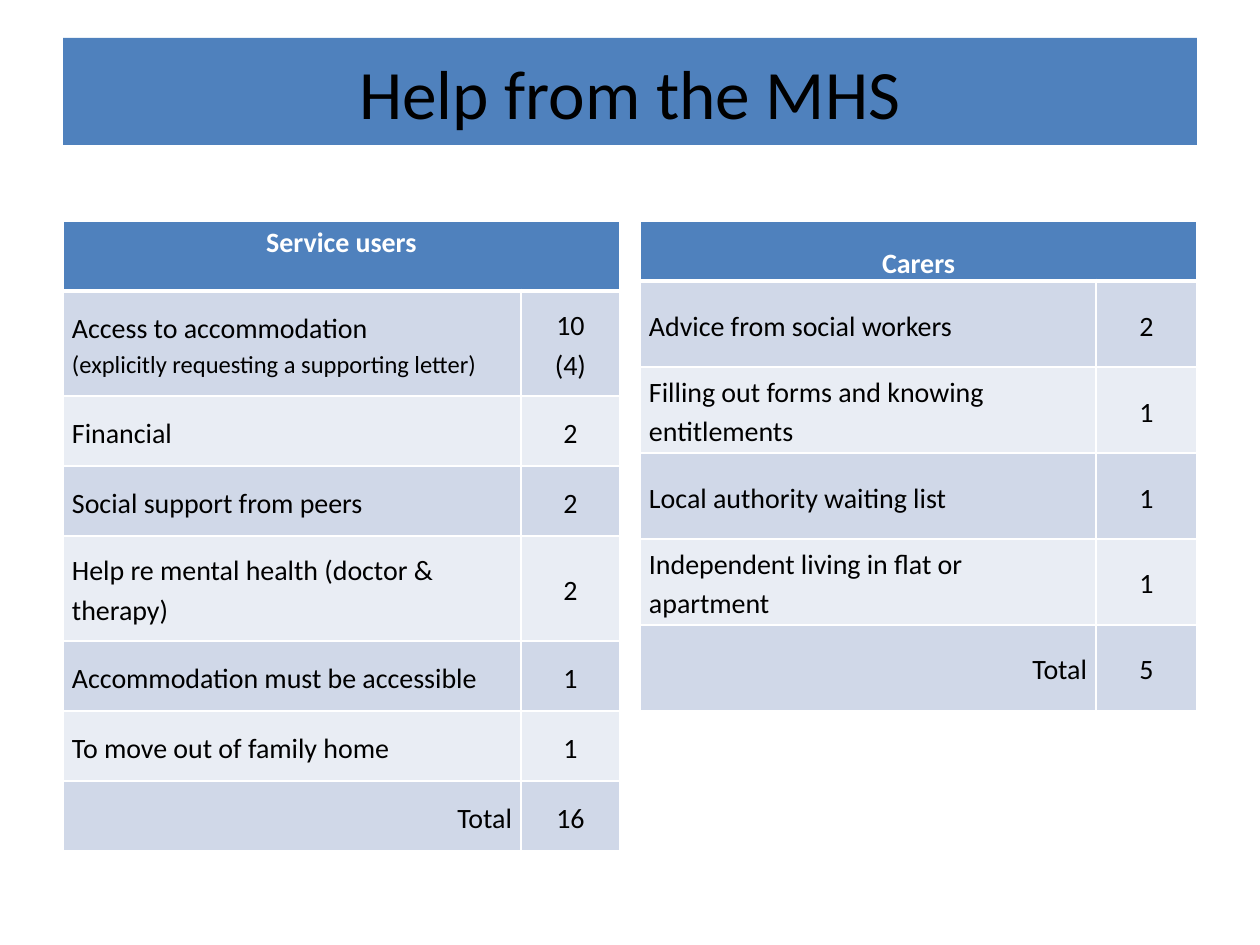
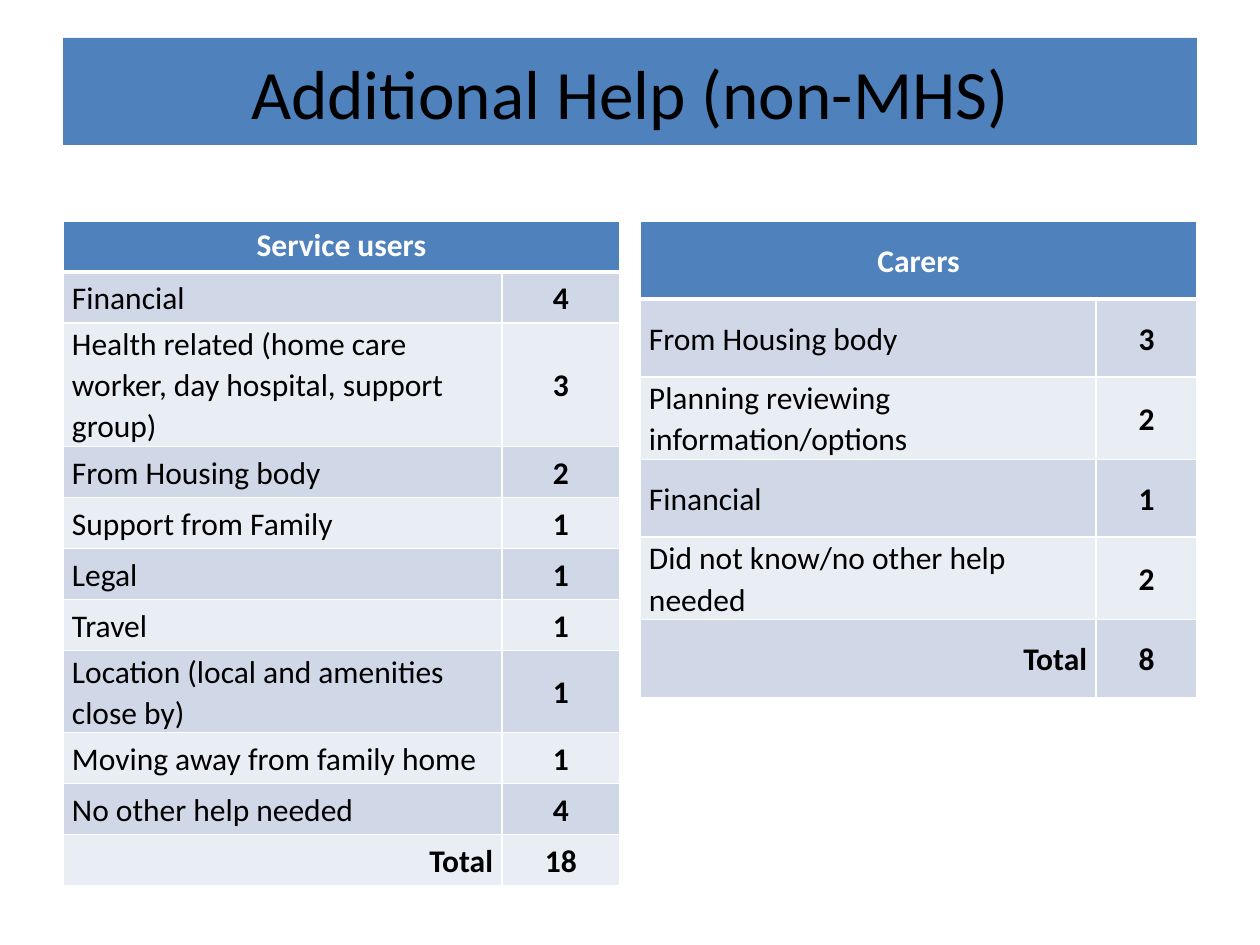
import pptx
import pptx.dml.color
import pptx.enum.text
import pptx.util
from lxml import etree
from pptx.oxml.ns import qn

PX = 914400 / 126
FONT = "Calibri"
COLORS = {"band": "4F81BD", "odd": "D0D8E8", "even": "E9EDF4",
          "text": "000000", "white": "FFFFFF"}
TITLE_BOX = (63, 38, 1134, 107)
TABLE_TOP, TABLE_WIDTH = 221, 557
LEFT_X, RIGHT_X = 63, 640
CELL_INSET = 9
HEADER_RULE, CELL_RULE = 3, 1

ALIGN = pptx.enum.text.PP_ALIGN
ANCHOR = pptx.enum.text.MSO_ANCHOR


def px(n):
    return pptx.util.Emu(round(n * PX))


def rgb(name):
    return pptx.dml.color.RGBColor.from_string(COLORS[name])


def set_font(font, size, color="text", bold=False):
    font.name = FONT
    font.size = pptx.util.Pt(size)
    font.bold = bold
    font.color.rgb = rgb(color)


def set_borders(cell, top, bottom):
    tc_pr = cell._tc.get_or_add_tcPr()
    widths = {"lnL": CELL_RULE, "lnR": CELL_RULE, "lnT": top, "lnB": bottom}
    for tag, width in widths.items():
        ln = etree.SubElement(tc_pr, qn(f"a:{tag}"), w=str(pptx.util.Pt(width)))
        fill = etree.SubElement(ln, qn("a:solidFill"))
        etree.SubElement(fill, qn("a:srgbClr"), val=COLORS["white"])


def style_cell(cell, fill, anchor, top=CELL_RULE, bottom=CELL_RULE):
    set_borders(cell, top, bottom)
    cell.fill.solid()
    cell.fill.fore_color.rgb = rgb(fill)
    cell.vertical_anchor = anchor
    cell.margin_left = cell.margin_right = px(CELL_INSET)
    cell.margin_top = cell.margin_bottom = 0


def write_cell(cell, text, align, spacing, sizes, color="text", bold=False):
    cell.text = text
    for p, size in zip(cell.text_frame.paragraphs, sizes):
        p.alignment = align
        p.line_spacing = spacing
        set_font(p.font, size, color, bold)


def add_title(slide, text, box):
    sp = slide.shapes.title
    sp.left, sp.top, sp.width, sp.height = map(px, box)
    sp.fill.solid()
    sp.fill.fore_color.rgb = rgb("band")
    tf = sp.text_frame
    tf.text = text
    tf.auto_size = pptx.enum.text.MSO_AUTO_SIZE.NONE
    tf.vertical_anchor = ANCHOR.MIDDLE
    p = tf.paragraphs[0]
    p.alignment = ALIGN.CENTER
    set_font(p.font, 39.6)


def add_help_table(slide, x, y, header, rows, value_width, heights, size,
                   spacing, header_anchor, header_spacing, bold):
    frame = slide.shapes.add_table(len(rows) + 1, 2, px(x), px(y),
                                   px(TABLE_WIDTH), px(sum(heights)))
    table = frame.table
    table.columns[0].width = px(TABLE_WIDTH - value_width)
    table.columns[1].width = px(value_width)
    for row, height in zip(table.rows, heights):
        row.height = px(height)

    first = table.cell(0, 0)
    first.merge(table.cell(0, 1))
    for col in range(2):
        style_cell(table.cell(0, col), "band", header_anchor, bottom=HEADER_RULE)
    write_cell(first, header, ALIGN.CENTER, header_spacing, [size], "white", True)

    for i, (label, value) in enumerate(rows, 1):
        is_total = label == "Total"
        label_cell, value_cell = table.cell(i, 0), table.cell(i, 1)
        for cell in (label_cell, value_cell):
            style_cell(cell, "odd" if i % 2 else "even", ANCHOR.MIDDLE,
                       top=HEADER_RULE if i == 1 else CELL_RULE)
        write_cell(label_cell, label, ALIGN.RIGHT if is_total else ALIGN.LEFT,
                   spacing, [size, size - 2], bold=bold and is_total)
        write_cell(value_cell, value, ALIGN.CENTER, spacing, [size, size], bold=bold)


def add_help_slide(prs, title, users, carers, **style):
    slide = prs.slides.add_slide(prs.slide_layouts[5])
    add_title(slide, title, TITLE_BOX)
    add_help_table(slide, LEFT_X, TABLE_TOP, "Service users",
                   header_anchor=ANCHOR.TOP, header_spacing=1.15, **users, **style)
    add_help_table(slide, RIGHT_X, TABLE_TOP, "Carers",
                   value_width=101, **carers, **style)


def main():
    prs = pptx.Presentation()
    prs.slide_width, prs.slide_height = px(1260), px(945)

    add_help_slide(
        prs, "Help from the MHS",
        users=dict(
            value_width=99,
            heights=[70, 105, 70, 70, 105, 70, 70, 70],
            rows=[
                ("Access to accommodation\n(explicitly requesting a supporting letter)",
                 "10\n(4)"),
                ("Financial", "2"),
                ("Social support from peers", "2"),
                ("Help re mental health (doctor & therapy)", "2"),
                ("Accommodation must be accessible", "1"),
                ("To move out of family home", "1"),
                ("Total", "16"),
            ]),
        carers=dict(
            header_anchor=ANCHOR.BOTTOM, header_spacing=1.15,
            heights=[60] + [86] * 5,
            rows=[
                ("Advice from social workers", "2"),
                ("Filling out forms and knowing entitlements", "1"),
                ("Local authority waiting list", "1"),
                ("Independent living in flat or apartment", "1"),
                ("Total", "5"),
            ]),
        size=16, spacing=1.15, bold=False)

    add_help_slide(
        prs, "Additional Help (non-MHS)",
        users=dict(
            value_width=118,
            heights=[51, 51, 123] + [51] * 4 + [82] + [51] * 3,
            rows=[
                ("Financial", "4"),
                ("Health related (home care worker, day hospital, support group)", "3"),
                ("From Housing body", "2"),
                ("Support from Family", "1"),
                ("Legal", "1"),
                ("Travel", "1"),
                ("Location (local and amenities close by)", "1"),
                ("Moving away from family home", "1"),
                ("No other help needed", "4"),
                ("Total", "18"),
            ]),
        carers=dict(
            header_anchor=ANCHOR.MIDDLE, header_spacing=1.07,
            heights=[78, 78, 82, 78, 82, 78],
            rows=[
                ("From Housing body", "3"),
                ("Planning reviewing information/options", "2"),
                ("Financial", "1"),
                ("Did not know/no other help needed", "2"),
                ("Total", "8"),
            ]),
        size=18, spacing=1.07, bold=True)

    prs.save("out.pptx")


if __name__ == "__main__":
    main()
